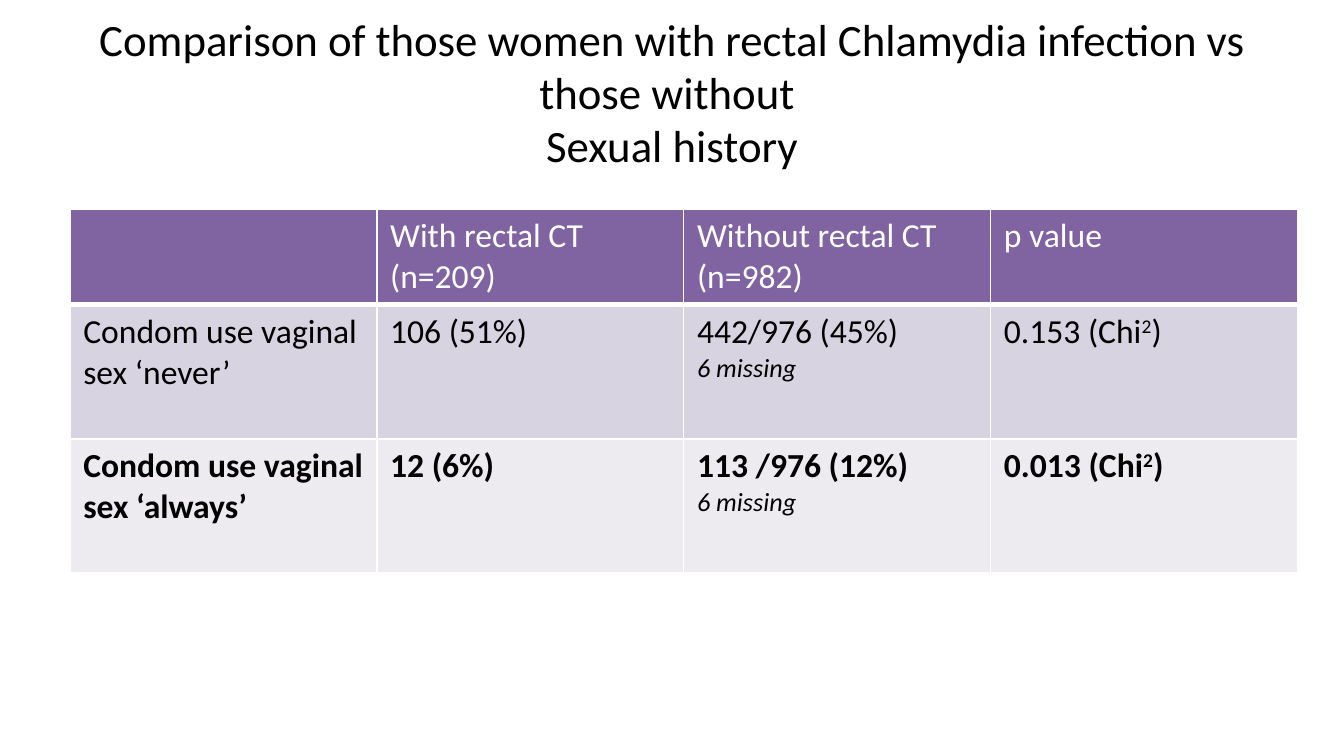
from lxml import etree
from pptx import Presentation
from pptx.dml.color import RGBColor
from pptx.enum import text
from pptx.oxml import ns
from pptx.util import Cm, Pt


def paint(fill, color):
    fill.solid()
    fill.fore_color.rgb = RGBColor.from_string(color)


def edge(cell, side, width):
    line = etree.SubElement(cell._tc.get_or_add_tcPr(), ns.qn("a:ln" + side), w=str(Pt(width)))
    fill = etree.SubElement(line, ns.qn("a:solidFill"))
    etree.SubElement(fill, ns.qn("a:srgbClr"), val="FFFFFF")


deck = Presentation()
deck.slide_width, deck.slide_height = Cm(25.4), Cm(14.29)
slide = deck.slides.add_slide(deck.slide_layouts[5])

# Title
title = slide.shapes.title
title.left, title.top, title.width, title.height = Cm(1.27), Cm(0.58), Cm(22.86), Cm(2.38)
frame = title.text_frame
frame.text = ("Comparison of those women with rectal Chlamydia infection vs those without "
              "\vSexual history")
frame.auto_size = text.MSO_AUTO_SIZE.NONE
frame.vertical_anchor = text.MSO_ANCHOR.MIDDLE
para = frame.paragraphs[0]
para.alignment = text.PP_ALIGN.CENTER
para.line_spacing = 0.98
for run in para.runs:
    run.font.size = Pt(24)
    run.font.name = "Calibri"
    paint(run.font.fill, "000000")

# Table content: a line break starts a note, ^ surrounds a superscript
rows = [
    ["", "With rectal CT (n=209)", "Without rectal CT (n=982)", "p value"],
    ["Condom use vaginal sex ‘never’", "106 (51%)",
     "442/976 (45%)\n6 missing", "0.153 (Chi^2^)"],
    ["Condom use vaginal sex ‘always’", "12 (6%)",
     "113 /976 (12%)\n6 missing", "0.013 (Chi^2^)"],
]
# Row height, fill, font colour, bold
looks = [
    (1.78, "8064A2", "FFFFFF", False),
    (2.54, "D8D3E0", "000000", False),
    (2.54, "EDEAF0", "000000", True),
]

# Table
grid = slide.shapes.add_table(3, 4, Cm(1.32), Cm(3.95), Cm(23.2), Cm(6.86)).table
for col in grid.columns:
    col.width = Cm(5.8)

for r, (words, look) in enumerate(zip(rows, looks)):
    height, back, ink, bold = look
    grid.rows[r].height = Cm(height)
    for c, word in enumerate(words):
        cell = grid.cell(r, c)
        for side in "LRTB":
            edge(cell, side, 3 if r == 0 and side == "B" else 1)
        paint(cell.fill, back)
        cell.text_frame.text = word.replace("^", "")
        for n, para in enumerate(cell.text_frame.paragraphs):
            para.font.size = Pt(18)
            if "^" in word:
                para.text = ""
                for part in word.split("^"):
                    para.add_run().text = part
                para.runs[1].font._element.set("baseline", "30000")
            for run in para.runs:
                run.font.name = "Calibri"
                run.font.size = Pt(14 if n else 18)
                run.font.italic = n > 0
                run.font.bold = bold and n == 0
                paint(run.font.fill, ink)

deck.save("out.pptx")
